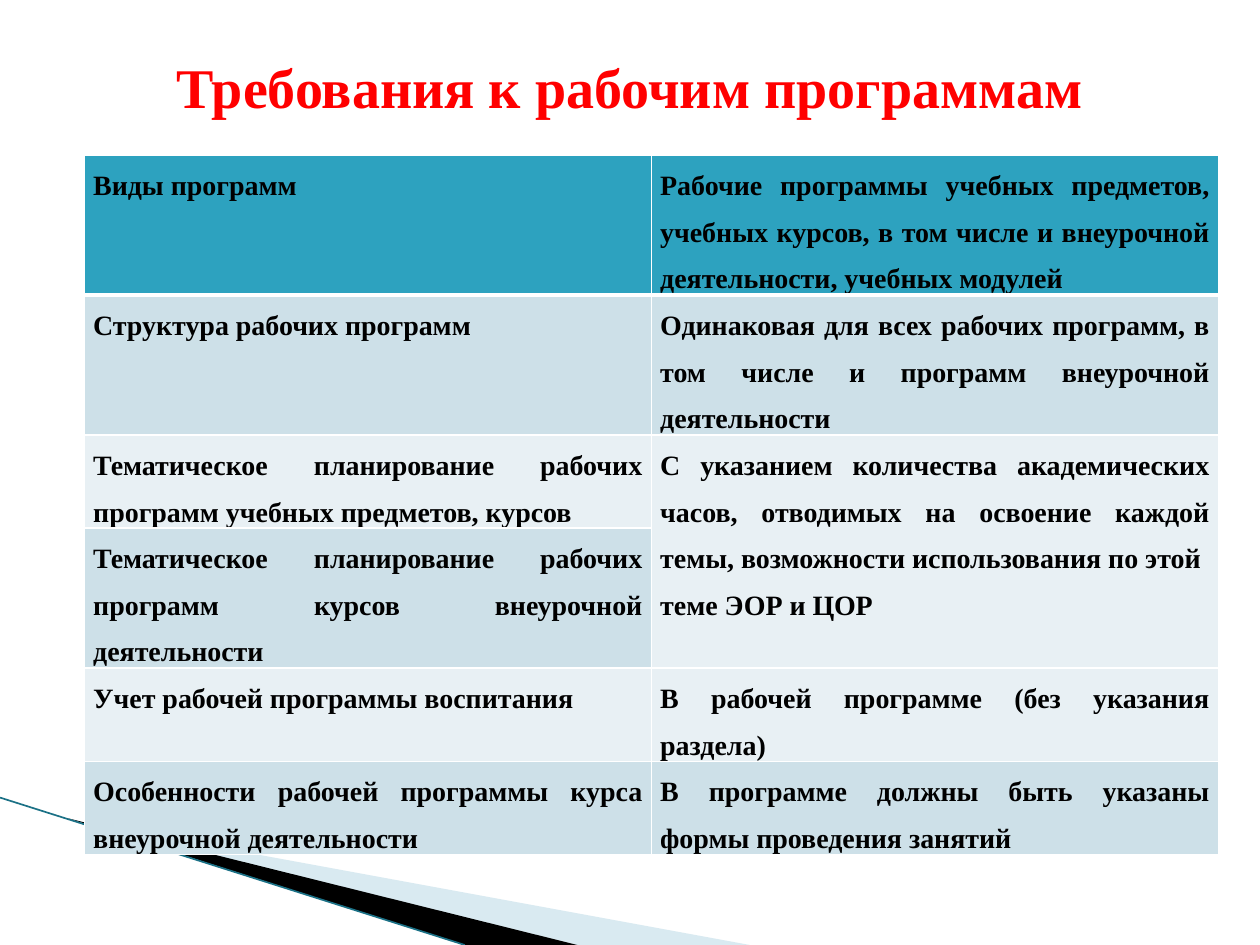
from lxml.etree import SubElement
from pptx import Presentation
from pptx.dml.color import RGBColor
from pptx.enum.shapes import MSO_CONNECTOR
from pptx.enum.text import MSO_ANCHOR, PP_ALIGN
from pptx.oxml.ns import qn
from pptx.util import Inches, Pt

W, H = Inches(10), Inches(7.5)
FONT = "Times New Roman"
RED = RGBColor(0xFF, 0x00, 0x00)
BLACK = RGBColor(0x00, 0x00, 0x00)
WHITE = RGBColor(0xFF, 0xFF, 0xFF)
HEADER = RGBColor(0x2D, 0xA2, 0xBF)
BANDS = (RGBColor(0xE8, 0xF0, 0xF4), RGBColor(0xCD, 0xE0, 0xE8))
PALE = RGBColor(0xA0, 0xCB, 0xDC)
TEAL = RGBColor(0x1B, 0x71, 0x86)

TITLE = "Требования к рабочим программам"
ROWS = [
    ("Виды программ",
     "Рабочие программы учебных предметов, учебных курсов, в том числе и "
     "внеурочной деятельности, учебных модулей"),
    ("Структура рабочих программ",
     "Одинаковая для всех рабочих программ, в том числе и программ "
     "внеурочной деятельности"),
    ("Тематическое планирование рабочих программ учебных предметов, курсов",
     "С указанием количества академических часов, отводимых на освоение "
     "каждой темы, возможности использования по этой\nтеме ЭОР и ЦОР"),
    ("Тематическое планирование рабочих программ курсов внеурочной "
     "деятельности", None),
    ("Учет рабочей программы воспитания",
     "В рабочей программе (без указания раздела)"),
    ("Особенности рабочей программы курса внеурочной деятельности",
     "В программе должны быть указаны формы проведения занятий"),
]
LINES = (3, 3, 2, 3, 2, 2)


def write(tf, text, size=16, color=BLACK, align=PP_ALIGN.JUSTIFY, spacing=1.5):
    """Fill a text frame with bold text, one paragraph per line."""
    for i, line in enumerate(text.split("\n")):
        p = tf.paragraphs[0] if i == 0 else tf.add_paragraph()
        p.alignment, p.line_spacing = align, spacing
        r = p.add_run()
        r.text = line
        r.font.name, r.font.size, r.font.bold = FONT, Pt(size), True
        r.font.color.rgb = color


def set_borders(cell, **widths):
    """Draw white cell borders of the given widths in points."""
    tc_pr = cell._tc.get_or_add_tcPr()
    for i, (side, width) in enumerate(widths.items()):
        ln = tc_pr.makeelement(qn(f"a:{side}"), {"w": str(Pt(width))})
        fill = SubElement(ln, qn("a:solidFill"))
        SubElement(fill, qn("a:srgbClr"), val=str(WHITE))
        tc_pr.insert(i, ln)


def add_wedge(s, box, points, color, alpha=None):
    """Add a filled outline whose points are shares of the box."""
    x, y, w, h = box
    pts = [(round(x + w * px), round(y + h * py)) for px, py in points]
    builder = s.shapes.build_freeform(*pts[0])
    builder.add_line_segments(pts[1:], close=True)
    sp = builder.convert_to_shape()
    sp.shadow.inherit = False
    sp.fill.solid()
    sp.fill.fore_color.rgb = color
    sp.line.fill.background()
    if alpha is not None:
        clr = sp._element.spPr.find(".//" + qn("a:srgbClr"))
        SubElement(clr, qn("a:alpha"), val=str(alpha * 1000))


def add_corner(s, box):
    """Draw the slanted bands in the bottom left corner."""
    x, y, w, h = box
    add_wedge(s, box, [(0.09, 0.15), (1, 1), (0.77, 1)], PALE, alpha=40)
    add_wedge(s, box, [(0.09, 0.14), (0.77, 1), (0.62, 1)], BLACK)
    line = s.shapes.add_connector(
        MSO_CONNECTOR.STRAIGHT, x, y, x + round(w * 0.62), y + h)
    line.line.color.rgb = TEAL
    line.line.width = Pt(0.95)
    SubElement(line._element.spPr, qn("a:effectLst"))


def add_title(s, box):
    """Place the heading in the title placeholder."""
    sp = s.shapes.title
    sp.left, sp.top, sp.width, sp.height = box
    tf = sp.text_frame
    tf.vertical_anchor = MSO_ANCHOR.TOP
    tf.margin_top = Inches(0.12)
    write(tf, TITLE, size=32, color=RED, align=PP_ALIGN.CENTER, spacing=1)


def add_requirements(s, box):
    """Build the table, with row heights shared out by lines of text."""
    x, y, w, h = box
    table = s.shapes.add_table(len(ROWS), 2, x, y, w, h).table
    for col in table.columns:
        col.width = w // 2
    for i, (texts, lines) in enumerate(zip(ROWS, LINES)):
        table.rows[i].height = h * lines // sum(LINES)
        for j, text in enumerate(texts):
            cell = table.cell(i, j)
            cell.margin_left = cell.margin_right = Inches(0.07)
            cell.margin_top = cell.margin_bottom = 0
            cell.fill.solid()
            cell.fill.fore_color.rgb = BANDS[i % 2] if i else HEADER
            set_borders(cell, lnL=1, lnR=1, lnT=1 if i != 1 else 3,
                        lnB=1 if i else 3)
            if text:
                write(cell.text_frame, text)
    table.cell(2, 1).merge(table.cell(3, 1))


def main():
    """Build and save the slide."""
    prs = Presentation()
    prs.slide_width, prs.slide_height = W, H
    s = prs.slides.add_slide(prs.slide_layouts[5])
    add_corner(s, (0, round(H * 0.844), round(W * 0.595), round(H * 0.156)))
    add_requirements(
        s, (round(W * 0.067), round(H * 0.164), round(W * 0.9), round(H * 0.74)))
    add_title(s, (round(W * 0.05), round(H * 0.04), round(W * 0.9), round(H / 6)))
    prs.save("out.pptx")


if __name__ == "__main__":
    main()
